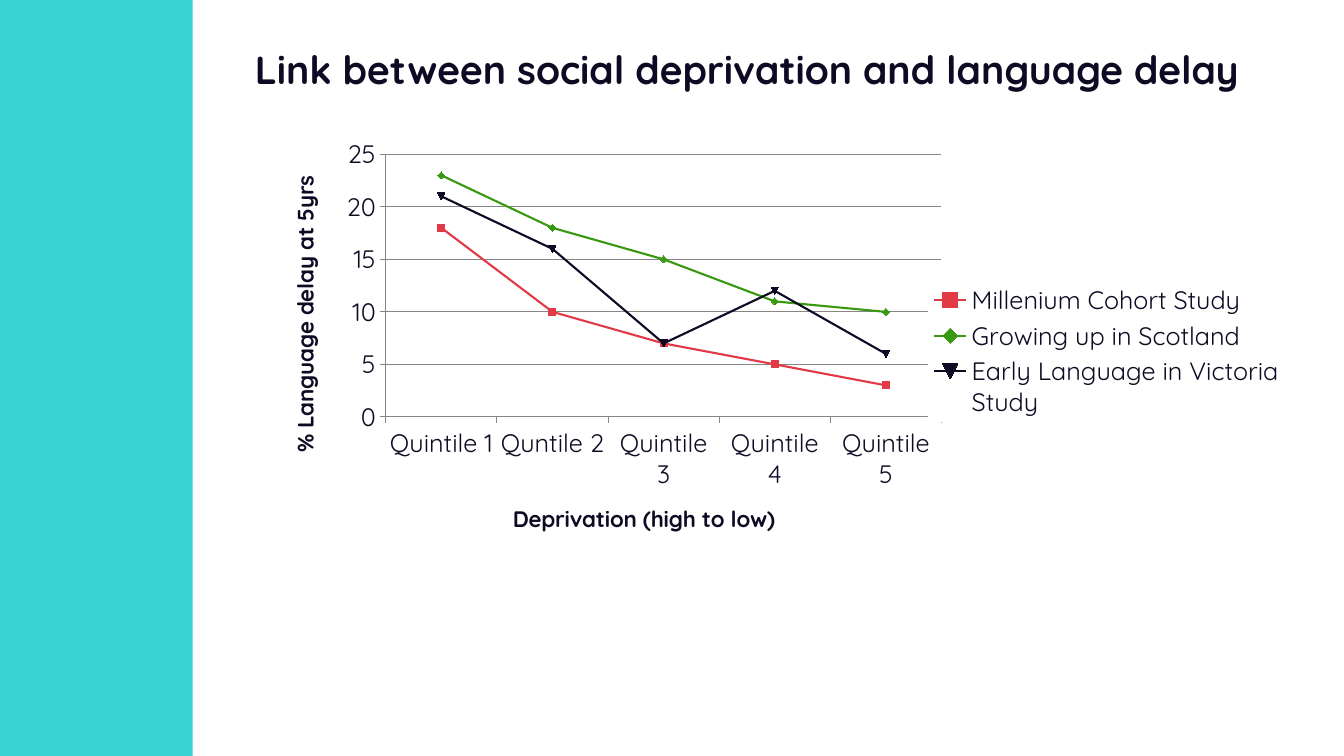
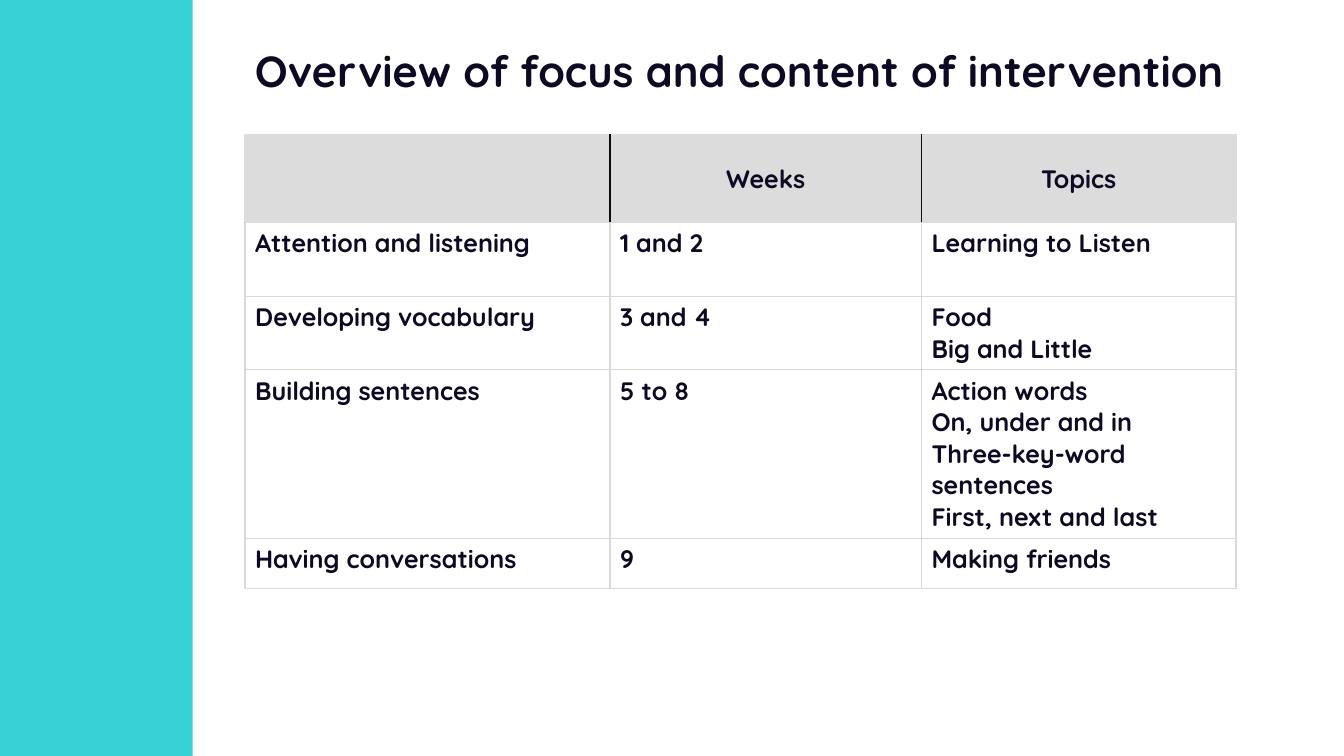
from lxml import etree
from pptx import Presentation
from pptx import util as u
from pptx.chart import data
from pptx.dml.color import RGBColor
from pptx.enum import chart as ch, shapes, text
from pptx.oxml import parse_xml
from pptx.oxml.ns import nsdecls, qn

TEAL = RGBColor(0x38, 0xD2, 0xD5)
INK = RGBColor(0x0D, 0x0B, 0x23)
RED = RGBColor(0xE1, 0x3A, 0x46)
GREEN = RGBColor(0x38, 0x98, 0x10)
GREY = RGBColor(0x86, 0x86, 0x86)
HEAD = RGBColor(0xDC, 0xDC, 0xDC)
RULE = RGBColor(0xD9, 0xD9, 0xD9)
DARK = RGBColor(0x0D, 0x0D, 0x0D)
FONT = "Quicksand"
LEFT, TOP = 2.43, 1.34


class Deck:
    """Holds the shared style and the slide being built."""

    def __init__(self):
        self.prs = Presentation()
        self.prs.slide_width = u.Inches(13.33)
        self.prs.slide_height = u.Inches(7.5)
        self.slide = None

    def style(self, font, size, bold=False):
        font.name, font.size, font.bold = FONT, u.Pt(size), bold
        font.color.rgb = INK

    def label(self, para, words, size):
        run = para.add_run()
        run.text = words
        self.style(run.font, size, True)

    def start(self, title, size, width):
        self.slide = self.prs.slides.add_slide(self.prs.slide_layouts[6])
        band = self.slide.shapes.add_shape(
            shapes.MSO_SHAPE.RECTANGLE, 0, 0, u.Inches(1.91), self.prs.slide_height)
        band.shadow.inherit = False
        band.fill.solid()
        band.fill.fore_color.rgb = TEAL
        band.line.fill.background()
        box = self.slide.shapes.add_textbox(
            u.Inches(LEFT), u.Inches(0.53), u.Inches(width), u.Inches(0.81))
        box.text_frame.word_wrap = True
        para = box.text_frame.paragraphs[0]
        para.line_spacing = 0.7
        self.label(para, title, size)

    def place(self, x, y, w, h, inner=False):
        target = '<c:layoutTarget val="inner"/>' if inner else ""
        return parse_xml(
            f'<c:layout {nsdecls("c")}><c:manualLayout>{target}'
            '<c:xMode val="edge"/><c:yMode val="edge"/>'
            f'<c:x val="{x}"/><c:y val="{y}"/><c:w val="{w}"/><c:h val="{h}"/>'
            '</c:manualLayout></c:layout>')

    def axis(self, axis, title):
        axis.has_title = True
        self.label(axis.axis_title.text_frame.paragraphs[0], title, 16)
        axis.major_tick_mark = ch.XL_TICK_MARK.OUTSIDE
        axis.minor_tick_mark = ch.XL_TICK_MARK.NONE
        axis.format.line.color.rgb = GREY
        self.style(axis.tick_labels.font, 18)

    def legend(self, chart):
        chart.has_legend = True
        key = chart.legend
        key.position = ch.XL_LEGEND_POSITION.RIGHT
        key.include_in_layout = False
        self.style(key.font, 18)
        root = chart._chartSpace.find(".//" + qn("c:legend"))
        for old in root.findall(qn("c:layout")):
            root.remove(old)
        root.find(qn("c:legendPos")).addnext(self.place(0.65, 0.34, 0.34, 0.33))
        root.find(qn("c:txPr")).addprevious(parse_xml(
            f'<c:spPr {nsdecls("c", "a")}><a:solidFill>'
            '<a:srgbClr val="FFFFFF"/></a:solidFill></c:spPr>'))

    def graph(self, cats, rows, across, up):
        info = data.CategoryChartData()
        info.categories = cats
        for name, vals, _ in rows:
            info.add_series(name, vals)
        chart = self.slide.shapes.add_chart(
            ch.XL_CHART_TYPE.LINE_MARKERS, u.Inches(LEFT), u.Inches(TOP),
            u.Inches(10.42), u.Inches(4.25), info).chart
        chart.has_title = False
        self.style(chart.font, 18)
        self.axis(chart.category_axis, across)
        self.axis(chart.value_axis, up)
        scale = chart.value_axis
        scale.minimum_scale, scale.maximum_scale, scale.major_unit = 0, 25, 5
        scale.major_gridlines.format.line.color.rgb = GREY
        chart.plots[0].vary_by_categories = False
        for line, (_, _, color) in zip(chart.plots[0].series, rows):
            line.smooth = False
            line.format.line.color.rgb = color
            line.format.line.width = u.Pt(1.5)
            line.marker.style = ch.XL_MARKER_STYLE.AUTOMATIC
            line.marker.size = 5
            line.marker.format.fill.solid()
            line.marker.format.fill.fore_color.rgb = color
            line.marker.format.line.color.rgb = color
        self.legend(chart)
        area = chart._chartSpace.find(".//" + qn("c:plotArea"))
        for old in area.findall(qn("c:layout")):
            area.remove(old)
        area.insert(0, self.place(0.134, 0.045, 0.529, 0.613, True))

    def edge(self, cell, side, color):
        props = cell._tc.get_or_add_tcPr()
        line = etree.SubElement(props, qn(f"a:ln{side}"), w=str(u.Pt(1)))
        fill = etree.SubElement(line, qn("a:solidFill"))
        etree.SubElement(fill, qn("a:srgbClr"), val=str(color))

    def table(self, rows, widths, heights):
        grid = self.slide.shapes.add_table(
            len(rows), len(widths), u.Inches(LEFT), u.Inches(TOP),
            u.Inches(sum(widths)), u.Inches(sum(heights))).table
        grid.horz_banding = False
        for col, width in zip(grid.columns, widths):
            col.width = u.Inches(width)
        for row, height in zip(grid.rows, heights):
            row.height = u.Inches(height)
        last = len(widths) - 1
        for r, row in enumerate(rows):
            for c, words in enumerate(row):
                self.cell(grid.cell(r, c), words, r, c, last)

    def cell(self, cell, words, r, c, last):
        head = r == 0
        base = HEAD if head else RULE
        self.edge(cell, "L", DARK if head and c > 0 else base)
        self.edge(cell, "R", DARK if head and c < last else base)
        self.edge(cell, "T", HEAD if r < 2 else RULE)
        self.edge(cell, "B", base)
        if head:
            cell.fill.solid()
            cell.fill.fore_color.rgb = HEAD
            cell.vertical_anchor = text.MSO_ANCHOR.MIDDLE
        else:
            cell.fill.background()
        for i, part in enumerate(words.split("\n")):
            frame = cell.text_frame
            para = frame.add_paragraph() if i else frame.paragraphs[0]
            if head:
                para.alignment = text.PP_ALIGN.CENTER
            if part:
                self.label(para, part, 18)


def main():
    deck = Deck()
    deck.start("Link between social deprivation and language delay", 28, 10.42)
    deck.graph(
        ["Quintile 1", "Quntile 2", "Quintile 3", "Quintile 4", "Quintile 5"],
        [("Millenium Cohort Study", (18, 10, 7, 5, 3), RED),
         ("Growing up in Scotland", (23, 18, 15, 11, 10), GREEN),
         ("Early Language in Victoria Study", (21, 16, 7, 12, 6), INK)],
        "Deprivation (high to low)", "% Language delay at 5yrs")

    deck.start("Overview of focus and content of intervention", 31, 9.82)
    deck.table(
        [("", "Weeks", "Topics"),
         ("Attention and listening", "1 and 2", "Learning to Listen"),
         ("Developing vocabulary", "3 and 4", "Food\nBig and Little"),
         ("Building sentences", "5 to 8",
          "Action words\nOn, under and in\nThree-key-word sentences\n"
          "First, next and last"),
         ("Having conversations", "9", "Making friends")],
        (3.62, 3.09, 3.12), (0.87, 0.73, 0.73, 1.67, 0.5))
    deck.prs.save("out.pptx")


if __name__ == "__main__":
    main()
